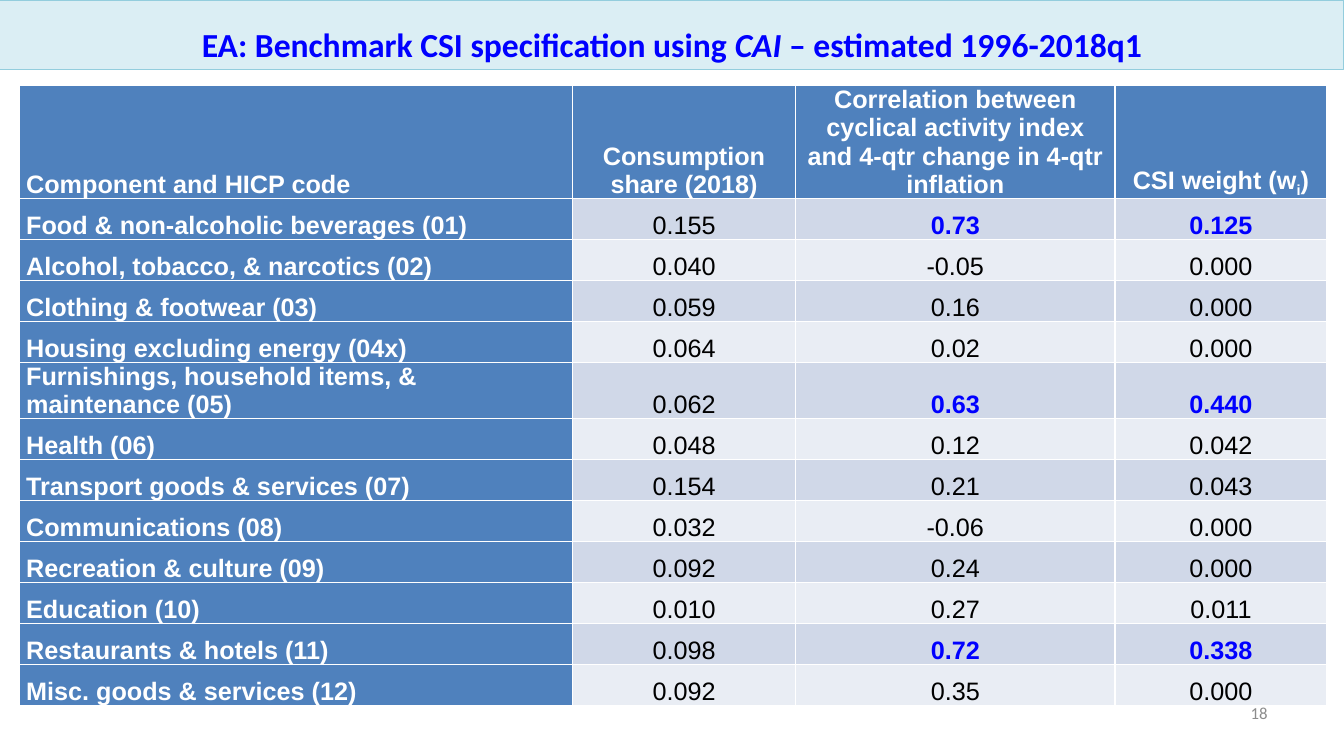
"""Build the slide with the benchmark CSI specification table for the euro area."""
from pptx import Presentation
from pptx.dml.color import RGBColor
from pptx.enum.shapes import MSO_SHAPE
from pptx.enum.text import MSO_ANCHOR as Anchor, PP_ALIGN as Align
from pptx.util import Inches, Pt

TITLE = [
    ("EA: Benchmark CSI specification using ", {}),
    ("CAI", {"italic": True}),
    (" – estimated 1996-2018q1", {}),
]
PAGE_NUMBER = "18"
HEADINGS = [
    [("Component and HICP code", {})],
    [("Consumption share (2018)", {})],
    [("Correlation between cyclical activity index and 4-qtr change in 4-qtr inflation", {})],
    [("CSI weight (w", {}), ("i", {"baseline": "-25000"}), (")", {})],
]
COMPONENTS = [
    ("Food & non-alcoholic beverages (01)", "0.155", "0.73", "0.125"),
    ("Alcohol, tobacco, & narcotics (02)", "0.040", "-0.05", "0.000"),
    ("Clothing & footwear (03)", "0.059", "0.16", "0.000"),
    ("Housing excluding energy (04x)", "0.064", "0.02", "0.000"),
    ("Furnishings, household items, & maintenance (05)", "0.062", "0.63", "0.440"),
    ("Health (06)", "0.048", "0.12", "0.042"),
    ("Transport goods & services (07)", "0.154", "0.21", "0.043"),
    ("Communications (08)", "0.032", "-0.06", "0.000"),
    ("Recreation & culture (09)", "0.092", "0.24", "0.000"),
    ("Education (10)", "0.010", "0.27", "0.011"),
    ("Restaurants & hotels (11)", "0.098", "0.72", "0.338"),
    ("Misc. goods & services (12)", "0.092", "0.35", "0.000"),
]
COLUMN_WIDTHS = [5.49, 2.21, 3.17, 2.1]
TABLE_LEFT, TABLE_TOP, TABLE_HEIGHT = 0.19, 0.85, 6.03
HEADER_HEIGHT, TALL_HEIGHT, TALL_ROW = 1.1, 0.46, 5
STRONG_CORRELATION = 0.5
HEAD_FILL, BAND_FILLS = "4F81BD", ("E9EDF4", "D0D8E8")
TITLE_FONT = {"name": "Calibri", "size": Pt(24), "bold": True, "color": "0000FF"}
NUMBER_FONT = {"name": "Calibri", "size": Pt(12), "color": "8C8C8C"}
LABEL_FONT = {"name": "Arial", "size": Pt(18), "bold": True, "color": "FFFFFF"}
VALUE_FONT = {**LABEL_FONT, "bold": False, "color": "000000"}
STRONG_FONT = {**LABEL_FONT, "color": "0000FF"}
TABLE_FORMAT = {"first_row": True, "first_col": True, "horz_banding": True}
CELL_FORMAT = {
    "margin_left": Inches(0.07), "margin_right": Inches(0.07),
    "margin_top": 0, "margin_bottom": 0, "vertical_anchor": Anchor.BOTTOM,
}


def paint(target, color):
    target.solid()
    target.fore_color.rgb = RGBColor.from_string(color)


def apply(target, values):
    for key, value in values.items():
        setattr(target, key, value)


def write(frame, spans, style, align):
    frame.word_wrap = True
    para = frame.paragraphs[0]
    para.alignment = align
    for text, changes in spans:
        span = para.add_run()
        span.text = text
        for key, value in {**style, **changes}.items():
            if key == "color":
                paint(span.font.fill, value)
            elif key == "baseline":
                span._r.get_or_add_rPr().set(key, value)
            else:
                setattr(span.font, key, value)


def add_title(page, width):
    box = page.shapes.add_shape(MSO_SHAPE.RECTANGLE, 0, 0, width, Inches(0.69))
    box.shadow.inherit = False
    paint(box.fill, "DBEEF4")
    paint(box.line.fill, "93CDDD")
    box.line.width = Pt(0)
    box.text_frame.vertical_anchor = Anchor.BOTTOM
    write(box.text_frame, TITLE, TITLE_FONT, Align.CENTER)


def add_page_number(page):
    box = page.shapes.add_textbox(Inches(9.56), Inches(6.87), Inches(3.11), Inches(0.4))
    box.text_frame.vertical_anchor = Anchor.MIDDLE
    write(box.text_frame, [(PAGE_NUMBER, {})], NUMBER_FONT, Align.RIGHT)


def add_components(page):
    rows = [HEADINGS] + [[[(text, {})] for text in entry] for entry in COMPONENTS]
    table = page.shapes.add_table(
        len(rows), len(COLUMN_WIDTHS), Inches(TABLE_LEFT), Inches(TABLE_TOP),
        Inches(sum(COLUMN_WIDTHS)), Inches(TABLE_HEIGHT),
    ).table
    apply(table, TABLE_FORMAT)
    for column, width in zip(table.columns, COLUMN_WIDTHS):
        column.width = Inches(width)
    row_height = (TABLE_HEIGHT - HEADER_HEIGHT - TALL_HEIGHT) / (len(rows) - 2)
    special_heights = {0: HEADER_HEIGHT, TALL_ROW: TALL_HEIGHT}
    for r, row in enumerate(rows):
        table.rows[r].height = Inches(special_heights.get(r, row_height))
        strong = r > 0 and float(COMPONENTS[r - 1][2]) > STRONG_CORRELATION
        for c, spans in enumerate(row):
            cell = table.cell(r, c)
            apply(cell, CELL_FORMAT)
            heading = r == 0 or c == 0
            paint(cell.fill, HEAD_FILL if heading else BAND_FILLS[r % 2])
            style = LABEL_FONT if heading else STRONG_FONT if strong and c > 1 else VALUE_FONT
            write(cell.text_frame, spans, style, Align.CENTER if c else Align.LEFT)


def main():
    deck = Presentation()
    deck.slide_width, deck.slide_height = Inches(13.33), Inches(7.5)
    page = deck.slides.add_slide(deck.slide_layouts[6])
    add_title(page, deck.slide_width)
    add_components(page)
    add_page_number(page)
    deck.save("out.pptx")


if __name__ == "__main__":
    main()
